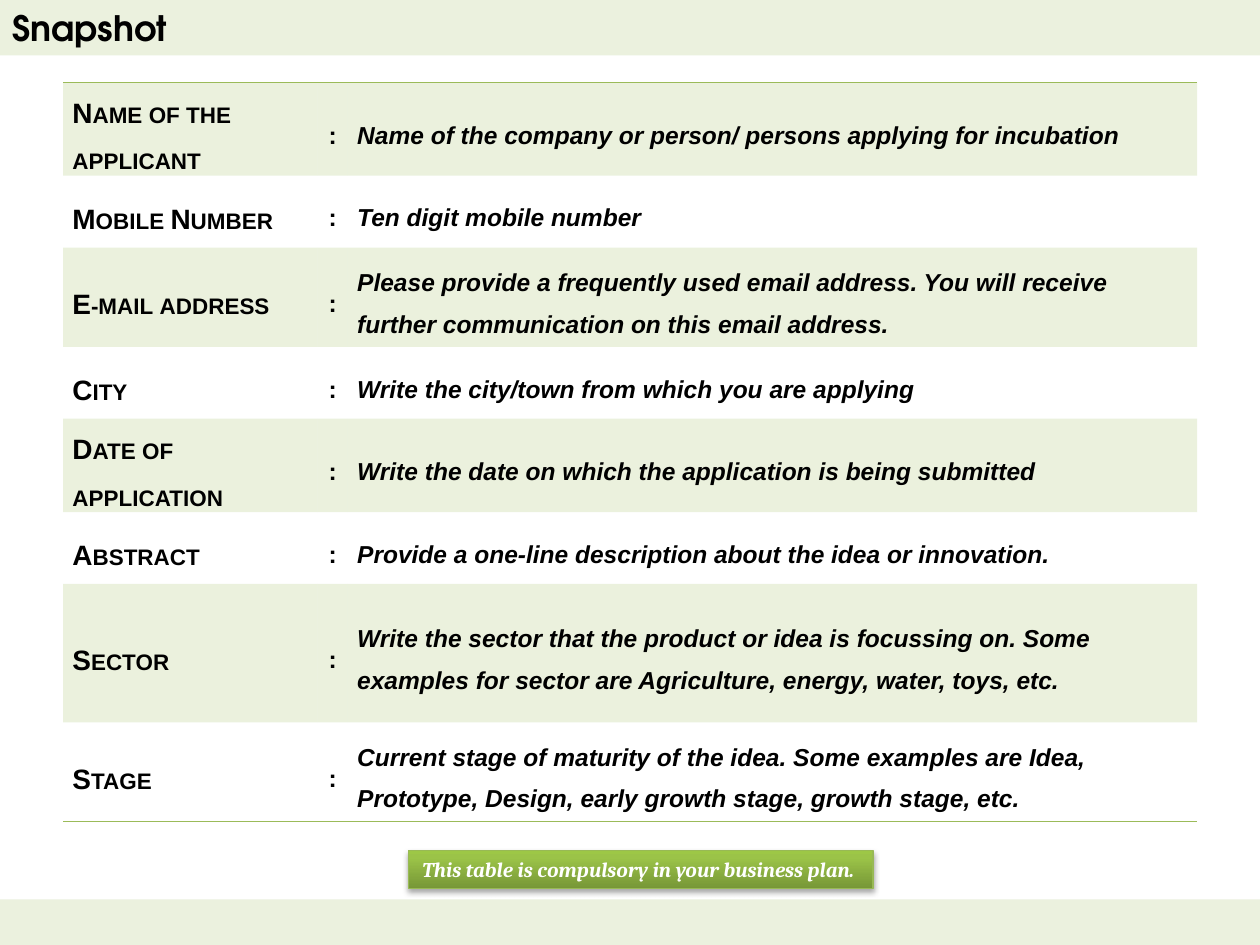
from copy import deepcopy

from lxml.etree import SubElement
from pptx import Presentation
from pptx.dml.color import RGBColor
from pptx.enum.shapes import MSO_SHAPE as Shape
from pptx.enum.text import MSO_ANCHOR as Anchor, MSO_AUTO_SIZE as AutoSize, PP_ALIGN as Align
from pptx.oxml import parse_xml
from pptx.oxml.ns import nsdecls, qn
from pptx.util import Cm, Pt

PALE_GREEN = "EBF1DE"
GREEN = "9BBB59"
NO_TABLE_STYLE = "{2D5ABB26-0587-4C30-8999-92F81FD0307C}"
COLUMN_WIDTHS = [5.13, 0.61, 17.12]
# label, guidance, row height in cm
FIELDS = [
    ("Name of the applicant", "Name of the company or person/ persons applying for incubation", 1.83),
    ("Mobile Number", "Ten digit mobile number", 1.45),
    ("E-mail address", "Please provide a frequently used email address. "
     "You will receive further communication on this email address.", 2),
    ("City", "Write the city/town from which you are applying", 1.45),
    ("Date of application", "Write the date on which the application is being submitted", 1.45),
    ("Abstract", "Provide a one-line description about the idea or innovation.", 1.45),
    ("Sector", "Write the sector that the product or idea is focussing on. "
     "Some examples for sector are Agriculture, energy, water, toys, etc.", 2.79),
    ("Stage", "Current stage of maturity of the idea. Some examples are Idea, "
     "Prototype, Design, early growth stage, growth stage, etc.", 2),
]


def rgb(color):
    return RGBColor.from_string(color)


def write(frame, text, font, size, color="000000", italic=False, align=Align.LEFT):
    frame.text = text
    paragraph = frame.paragraphs[0]
    paragraph.alignment = align
    run = paragraph.runs[0]
    run.font.name, run.font.size = font, Pt(size)
    run.font.bold, run.font.italic = True, italic
    run.font.color.rgb = rgb(color)
    return paragraph


def add_band(slide, top, height):
    band = slide.shapes.add_shape(Shape.RECTANGLE, 0, Cm(top), Cm(25.4), Cm(height))
    band.shadow.inherit = False
    band.fill.solid()
    band.fill.fore_color.rgb = rgb(PALE_GREEN)
    band.line.fill.background()
    return band


def tint_cell(cell):
    cell.fill.solid()
    cell.fill.fore_color.rgb = rgb(GREEN)
    tint = cell.fill.fore_color._xFill.find(qn("a:srgbClr"))
    SubElement(tint, qn("a:alpha"), val="20000")


def rule_cell(cell, side):
    """Draw a border; side is lnT or lnB."""
    cell._tc.get_or_add_tcPr().insert(0, parse_xml(
        f'<a:{side} {nsdecls("a")} w="12700"><a:solidFill><a:srgbClr val="{GREEN}"/>'
        f'</a:solidFill></a:{side}>'))


def write_cell(cell, text, size, **style):
    cell.vertical_anchor = Anchor.MIDDLE
    cell.margin_left = cell.margin_right = Cm(0.19)
    cell.margin_top = cell.margin_bottom = 0
    paragraph = write(cell.text_frame, text, "Arial", size, **style)
    paragraph.line_spacing = 1.5
    paragraph.space_before = paragraph.space_after = Pt(6)
    return paragraph


def add_field_table(slide):
    heights = [height for _, _, height in FIELDS]
    table = slide.shapes.add_table(len(FIELDS), 3, Cm(1.27), Cm(1.66),
                                   Cm(sum(COLUMN_WIDTHS)), Cm(sum(heights))).table
    table.first_row = table.horz_banding = False
    table._tbl.tblPr.find(qn("a:tableStyleId")).text = NO_TABLE_STYLE
    for column, width in zip(table.columns, COLUMN_WIDTHS):
        column.width = Cm(width)
    for index, (label, guidance, height) in enumerate(FIELDS):
        row = table.rows[index]
        row.height = Cm(height)
        label_cell, colon_cell, guidance_cell = row.cells
        label_text = write_cell(label_cell, label, 16)
        label_text.runs[0].font._element.set("cap", "small")
        write_cell(colon_cell, ":", 14, align=Align.CENTER)
        write_cell(guidance_cell, guidance, 14, italic=True)
        for cell in row.cells:
            if index % 2 == 0:
                tint_cell(cell)
            if index == 0:
                rule_cell(cell, "lnT")
            if index == len(FIELDS) - 1:
                rule_cell(cell, "lnB")


def fill_gradient(shape, stops):
    """Fill from bottom to top with (position, color) stops."""
    shape.fill.gradient()
    shape.fill.gradient_angle = 90
    stop_list = shape._element.spPr.find(qn("a:gradFill")).find(qn("a:gsLst"))
    while len(stop_list) < len(stops):
        stop_list.append(deepcopy(stop_list[0]))
    for stop, (position, color) in zip(shape.fill.gradient_stops, stops):
        stop.position = position
        stop.color.rgb = rgb(color)


def add_notice(slide):
    notice = slide.shapes.add_shape(Shape.RECTANGLE, Cm(8.23), Cm(17.14), Cm(9.37), Cm(0.77))
    fill_gradient(notice, [(0, "779737"), (0.8, "9BC348"), (1, "9DC746")])
    notice.line.color.rgb = rgb("98B955")
    notice.line.width = Pt(0.75)
    notice.shadow.inherit = False
    effects = notice._element.spPr.find(qn("a:effectLst"))
    effects.append(parse_xml(
        f'<a:outerShdw {nsdecls("a")} blurRad="40000" dist="23000" dir="5400000" rotWithShape="0">'
        '<a:srgbClr val="000000"><a:alpha val="35000"/></a:srgbClr></a:outerShdw>'))
    frame = notice.text_frame
    frame.word_wrap = False
    frame.auto_size = AutoSize.SHAPE_TO_FIT_TEXT
    frame.vertical_anchor = Anchor.TOP
    write(frame, "This table is compulsory in your business plan. ", "Cambria", 12,
          "FFFFFF", italic=True, align=Align.CENTER)


def main():
    deck = Presentation()
    deck.slide_width, deck.slide_height = Cm(25.4), Cm(19.05)
    slide = deck.slides.add_slide(deck.slide_layouts[6])
    add_band(slide, top=18.13, height=0.92)
    title_band = add_band(slide, top=0, height=1.12)
    title_band.text_frame.vertical_anchor = Anchor.MIDDLE
    write(title_band.text_frame, "Snapshot", "TeX Gyre Adventor", 20)
    add_field_table(slide)
    add_notice(slide)
    deck.save("out.pptx")


if __name__ == "__main__":
    main()
